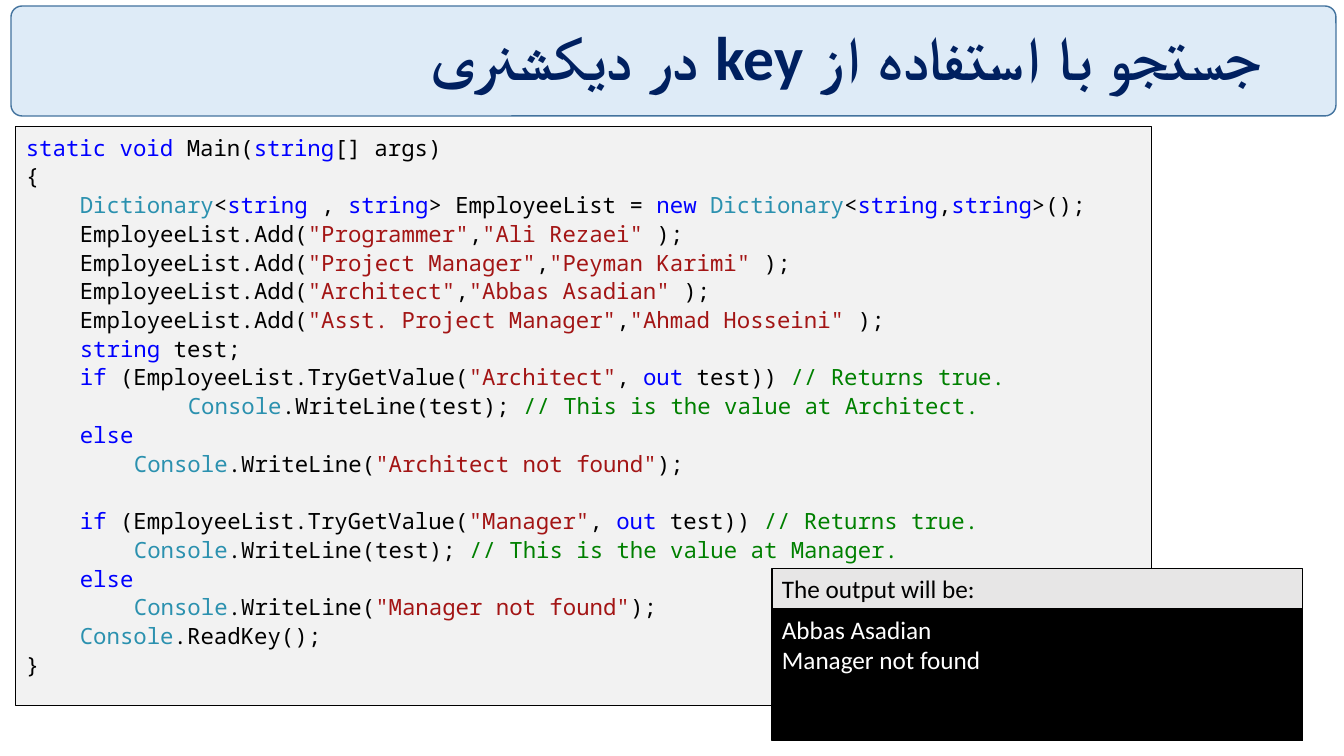
import pptx
import pptx.dml.color
import pptx.enum.shapes
import pptx.enum.text
import pptx.util

RGBColor = pptx.dml.color.RGBColor
SHAPE = pptx.enum.shapes.MSO_SHAPE
ALIGN = pptx.enum.text.PP_ALIGN
ANCHOR = pptx.enum.text.MSO_ANCHOR

BLACK = RGBColor(0x00, 0x00, 0x00)
WHITE = RGBColor(0xFF, 0xFF, 0xFF)
NAVY = RGBColor(0x00, 0x20, 0x60)
PALE_BLUE = RGBColor(0xDE, 0xEB, 0xF7)
STEEL_BLUE = RGBColor(0x43, 0x73, 0x9E)
CODE_GREY = RGBColor(0xF2, 0xF2, 0xF2)
CAPTION_GREY = RGBColor(0xE7, 0xE6, 0xE6)
KEYWORD_BLUE = RGBColor(0x00, 0x00, 0xFF)
TYPE_TEAL = RGBColor(0x2B, 0x91, 0xAF)
STRING_RED = RGBColor(0xA3, 0x15, 0x15)
COMMENT_GREEN = RGBColor(0x00, 0x80, 0x00)

KEYWORDS = {"static void", "string", "new", "if", "else", "out"}
TYPES = {"Dictionary", "Console"}
EMPLOYEES = [
    ("Programmer", "Ali Rezaei"),
    ("Project Manager", "Peyman Karimi"),
    ("Architect", "Abbas Asadian"),
    ("Asst. Project Manager", "Ahmad Hosseini"),
]


def lookup(key, result_indent):
    return [
        (1, f'if| (EmployeeList.TryGetValue(|"{key}"|, |out| test)) |// Returns true.'),
        (result_indent, f"Console|.WriteLine(test); |// This is the value at {key}."),
        (1, "else"),
        (2, f'Console|.WriteLine(|"{key} not found"|);'),
    ]


FIRST_PART = [
    (0, "static void| Main(|string|[] args)"),
    (0, "{"),
    (1, "Dictionary|<|string| , |string|> EmployeeList = |new |Dictionary|<|string|,|string|>();"),
    *[(1, f'EmployeeList.Add(|"{role}"|,|"{name}"| );') for role, name in EMPLOYEES],
    (1, "string| test;"),
    *lookup("Architect", 3),
]
SECOND_PART = [
    *lookup("Manager", 2),
    (1, "Console|.ReadKey();"),
    (0, "}"),
]


def token_colour(token):
    if token.startswith("//"):
        return COMMENT_GREEN
    if token.startswith('"'):
        return STRING_RED
    if token.strip() in KEYWORDS:
        return KEYWORD_BLUE
    return TYPE_TEAL if token in TYPES else BLACK


class SlideBuilder:
    """Holds the style and the current slide, and draws each kind of element."""

    text_font = "Calibri"
    code_font = "Noto Sans Mono"
    code_indent = 54
    blank_line = 20.5

    def __init__(self, presentation):
        self.scale = presentation.slide_width / 1344
        self.slide = presentation.slides.add_slide(presentation.slide_layouts[5])

    def px(self, *lengths):
        return [round(length * self.scale) for length in lengths]

    def box(self, bounds, fill, line=BLACK, width=0.75, kind=SHAPE.RECTANGLE, parent=None):
        shapes = (parent or self.slide).shapes
        shape = shapes.add_shape(kind, *self.px(*bounds))
        shape.shadow.inherit = False
        shape.fill.solid()
        shape.fill.fore_color.rgb = fill
        shape.line.color.rgb = line
        shape.line.width = pptx.util.Pt(width)
        shape.text_frame.vertical_anchor = ANCHOR.TOP
        return shape

    def style(self, paragraph, font, size, colour=None, bold=False):
        paragraph.font.name = font
        paragraph.font.size = pptx.util.Pt(size)
        paragraph.font.bold = bold
        if colour is not None:
            paragraph.font.color.rgb = colour

    def paragraphs(self, shape, count):
        frame = shape.text_frame
        return [frame.paragraphs[0], *(frame.add_paragraph() for _ in range(count - 1))]

    def title(self, text, bounds, card_bounds):
        card = self.box(card_bounds, PALE_BLUE, STEEL_BLUE, 1, SHAPE.ROUNDED_RECTANGLE)
        card.adjustments[0] = 0.1
        title = self.slide.shapes.title
        card.element.addnext(title.element)
        title.left, title.top, title.width, title.height = self.px(*bounds)
        title.text_frame.text = text
        title.text_frame.vertical_anchor = ANCHOR.MIDDLE
        paragraph = title.text_frame.paragraphs[0]
        paragraph.alignment = ALIGN.RIGHT
        paragraph.line_spacing = 0.9
        self.style(paragraph, self.text_font, 44, NAVY, True)
        paragraph.font._element.getparent().set("rtl", "1")

    def code(self, parts, bounds):
        shape = self.box(bounds, CODE_GREY)
        lines = [line for part in parts for line in part]
        for paragraph, (indent, source) in zip(self.paragraphs(shape, len(lines)), lines):
            paragraph.alignment = ALIGN.LEFT
            paragraph.line_spacing = 1.07
            self.style(paragraph, self.code_font, 16)
            margin = self.px(indent * self.code_indent)[0]
            paragraph.font._element.getparent().set("marL", str(margin))
            for token in source.split("|"):
                run = paragraph.add_run()
                run.text = token
                run.font.color.rgb = token_colour(token)
        second_start = shape.text_frame.paragraphs[len(parts[0])]
        second_start.space_before = pptx.util.Pt(self.blank_line)

    def panel(self, lines, bounds, fill, colour, parent):
        shape = self.box(bounds, fill, parent=parent)
        for paragraph, line in zip(self.paragraphs(shape, len(lines)), lines):
            paragraph.text = line
            paragraph.alignment = ALIGN.LEFT
            self.style(paragraph, self.text_font, 18, colour)

    def output(self, caption, lines, left, top, width):
        group = self.slide.shapes.add_group_shape()
        caption_height = 40
        self.panel([caption], (left, top, width, caption_height), CAPTION_GREY, BLACK, group)
        self.panel(lines, (left, top + caption_height, width, 132), BLACK, WHITE, group)


def main():
    presentation = pptx.Presentation()
    presentation.slide_width = pptx.util.Inches(13.33)
    presentation.slide_height = pptx.util.Inches(7.5)
    builder = SlideBuilder(presentation)
    builder.title("جستجو با استفاده از key در دیکشنری", (24, 15, 1249, 91), (11, 6, 1325, 110))
    builder.code([FIRST_PART, SECOND_PART], (16, 127, 1136, 579))
    builder.output("The output will be:", ["Abbas Asadian", "Manager not found"], 772, 569, 531)
    presentation.save("out.pptx")


if __name__ == "__main__":
    main()
